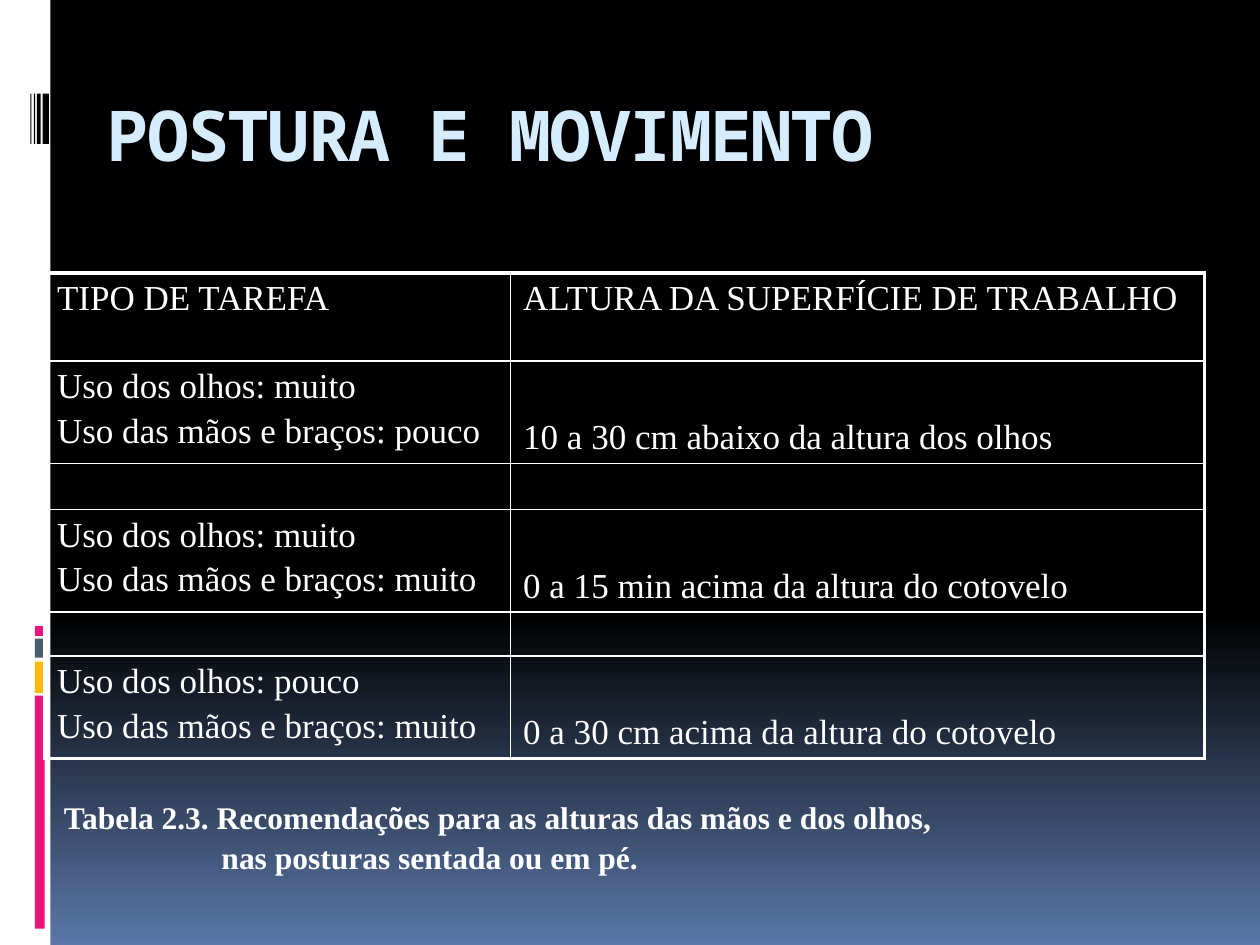
"""Build the slide on work-surface heights for sitting and standing postures."""
from lxml import etree
from pptx import Presentation
from pptx.dml.color import RGBColor
from pptx.enum import shapes, text
from pptx.oxml import ns
from pptx.util import Pt


class Theme:
    white, black, title = "FFFFFF", "000000", "D6ECFF"
    pink, amber, slate, blue = "EA157A", "FEB80A", "4E5B6F", "5B77A8"
    title_font, body_font = "Noto Sans Mono", "Times New Roman"
    title_size, table_size, caption_size, gap_size = 40, 20, 18, 12
    outer_line, inner_line = 2.25, 1


TITLE = "POSTURA E MOVIMENTO"
ROWS = [
    (["TIPO DE TAREFA"], ["ALTURA DA SUPERFÍCIE DE TRABALHO"]),
    (["Uso dos olhos: muito", "Uso das mãos e braços: pouco"],
     ["10 a 30 cm abaixo da altura dos olhos"]),
    ([], []),
    (["Uso dos olhos: muito", "Uso das mãos e braços: muito"],
     ["0 a 15 min acima da altura do cotovelo"]),
    ([], []),
    (["Uso dos olhos: pouco", "Uso das mãos e braços: muito"],
     ["0 a 30 cm acima da altura do cotovelo"]),
]
CAPTION = ["Tabela 2.3. Recomendações para as alturas das mãos e dos olhos,",
           "nas posturas sentada ou em pé."]
COLUMN_WIDTHS = [266.4, 396.7]
ROW_HEIGHTS = [50.4, 55.6, 26.2, 55.6, 25.2, 55.6]
SIDE_BARS = [(397.5, 133.2, Theme.pink), (378, 18, Theme.amber),
             (365, 10.8, Theme.slate), (357.8, 5.6, Theme.pink)]
STRIPES = [(24.4, 3.6), (21.1, 2.2), (19.4, 0.8), (17.4, 0.6)]


def add_bar(page, left, top, width, height, color):
    """Draw one plain filled rectangle."""
    bar = page.shapes.add_shape(shapes.MSO_SHAPE.RECTANGLE,
                                Pt(left), Pt(top), Pt(width), Pt(height))
    bar.shadow.inherit = False
    bar.fill.solid()
    bar.fill.fore_color.rgb = RGBColor.from_string(color)
    bar.line.fill.background()


def write(frame, lines, font=Theme.body_font, size=Theme.table_size,
          color=Theme.white, bold=False, before=3.3, leading=None,
          tracking=None, indents=()):
    """Fill a text frame with one paragraph per line."""
    frame.word_wrap = True
    for index, line in enumerate(lines):
        para = frame.add_paragraph() if index else frame.paragraphs[0]
        if index:
            para.space_before = Pt(before)
        if leading:
            para.line_spacing = leading
        if indents:
            para._p.get_or_add_pPr().set("marL", str(Pt(indents[index])))
        span = para.add_run()
        span.text = line
        span.font.name, span.font.size, span.font.bold = font, Pt(size), bold
        span.font.color.rgb = RGBColor.from_string(color)
        if tracking:
            span._r.get_or_add_rPr().set("spc", str(tracking * 100))


def add_text(page, left, top, width, height, lines, **format):
    """Place a text box and write its lines."""
    box = page.shapes.add_textbox(Pt(left), Pt(top), Pt(width), Pt(height))
    write(box.text_frame, lines, **format)


def set_border(cell, side, width):
    """Give one side of a cell a solid white line."""
    line = etree.SubElement(cell._tc.get_or_add_tcPr(), ns.qn(f"a:ln{side}"),
                            w=str(Pt(width)))
    fill = etree.SubElement(line, ns.qn("a:solidFill"))
    etree.SubElement(fill, ns.qn("a:srgbClr"), val=Theme.white)


def add_task_table(page, left, top):
    """Draw the table with a heavy frame and thin inner lines."""
    last_row, last_column = len(ROWS) - 1, len(COLUMN_WIDTHS) - 1
    table = page.shapes.add_table(
        len(ROWS), len(COLUMN_WIDTHS), Pt(left), Pt(top),
        Pt(sum(COLUMN_WIDTHS)), Pt(sum(ROW_HEIGHTS))).table
    table.first_row = table.horz_banding = False
    for column, width in zip(table.columns, COLUMN_WIDTHS):
        column.width = Pt(width)
    for r, (row, height) in enumerate(zip(table.rows, ROW_HEIGHTS)):
        row.height = Pt(height)
        for c, lines in enumerate(ROWS[r]):
            cell = table.cell(r, c)
            outer = {"L": c == 0, "R": c == last_column,
                     "T": r == 0, "B": r == last_row}
            for side, heavy in outer.items():
                set_border(cell, side, Theme.outer_line if heavy else Theme.inner_line)
            cell.fill.background()
            cell.vertical_anchor = (text.MSO_ANCHOR.BOTTOM if r and c
                                    else text.MSO_ANCHOR.TOP)
            write(cell.text_frame, lines)
            if not lines:
                etree.SubElement(cell.text_frame.paragraphs[0]._p,
                                 ns.qn("a:endParaRPr"), sz=str(Theme.gap_size * 100))


def paint_background(page):
    """Fade the page from black to blue towards the bottom."""
    fill = page.background.fill
    fill.gradient()
    fill.gradient_angle = 270
    stops = [(0.65, Theme.black), (1, Theme.blue)]
    for stop, (position, color) in zip(fill.gradient_stops, stops):
        stop.position = position
        stop.color.rgb = RGBColor.from_string(color)


def main():
    """Assemble and save the deck."""
    deck = Presentation()
    deck.slide_width, deck.slide_height = Pt(720), Pt(540)
    page = deck.slides.add_slide(deck.slide_layouts[6])
    paint_background(page)
    add_bar(page, 0, 0, 28.8, 540, Theme.white)
    for top, height, color in SIDE_BARS:
        add_bar(page, 20, top, 5.6, height, color)
    for left, width in STRIPES:
        add_bar(page, left, 53.5, width, 28.8, Theme.black)
    add_text(page, 54, 49, 612, 90, [TITLE], font=Theme.title_font,
             size=Theme.title_size, color=Theme.title, bold=True, tracking=-1)
    add_task_table(page, 25.4, 156)
    add_text(page, 29.5, 455, 654, 50.4, CAPTION, size=Theme.caption_size,
             bold=True, before=3.6, leading=0.9, indents=(0, 90))
    deck.save("out.pptx")


if __name__ == "__main__":
    main()
